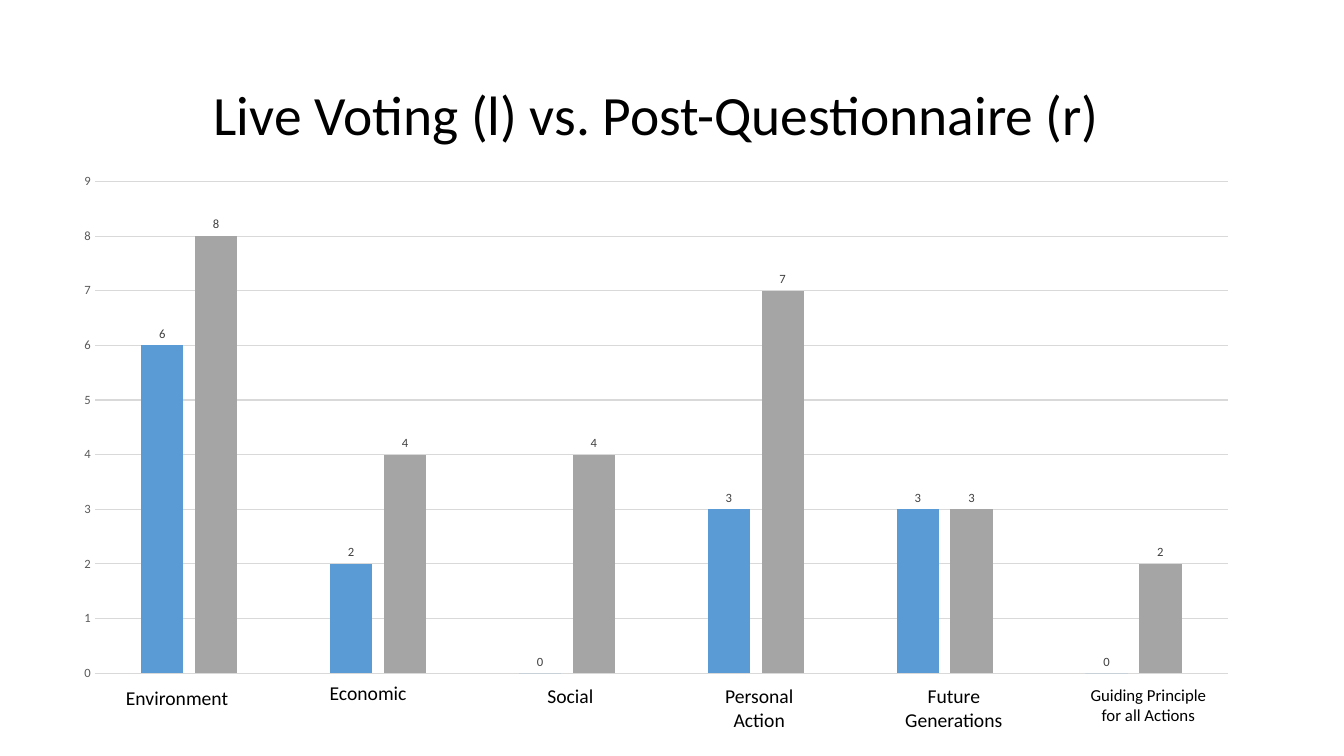
from dataclasses import dataclass

import lxml.etree
import pptx
import pptx.chart.data
import pptx.dml.color
import pptx.enum.chart
import pptx.enum.shapes
import pptx.enum.text
import pptx.oxml.ns
import pptx.util

Inches = pptx.util.Inches
Align = pptx.enum.text.PP_ALIGN


@dataclass(frozen=True)
class Theme:
    font: str = "Calibri"
    ink: str = "000000"
    paper: str = "FFFFFF"
    grid: str = "D9D9D9"
    axis_text: str = "595959"
    value_text: str = "404040"
    title_size: float = 39.6
    label_size: float = 14
    small_label_size: float = 12
    chart_size: float = 10
    axis_size: float = 9
    line_width: float = 0.75


@dataclass(frozen=True)
class Area:
    left: float
    top: float
    width: float
    height: float

    def lengths(self) -> list[int]:
        return [Inches(side) for side in (self.left, self.top, self.width, self.height)]


@dataclass(frozen=True)
class Series:
    name: str
    values: tuple[int, ...]
    color: str


@dataclass(frozen=True)
class Label:
    text: str
    area: Area
    align: Align = Align.LEFT
    size: float = Theme.label_size


THEME = Theme()
SERIES = (
    Series("Live Voting", (6, 2, 0, 3, 3, 0), "5B9BD5"),
    Series("Post-Questionnaire", (8, 4, 4, 7, 3, 2), "A5A5A5"),
)
TITLE = f"{SERIES[0].name} (l) vs. {SERIES[1].name} (r)"
TITLE_AREA = Area(2.02, 0.84, 10, 0.65)
CHART_AREA = Area(0.6, 1.62, 11.81, 5.35)
PLOT_AREA = Area(0.94, 1.8, 11.24, 4.88)
LABELS = (
    Label("Environment", Area(1.15, 6.76, 1.42, 0.34)),
    Label("Economic", Area(3.17, 6.71, 1.42, 0.34)),
    Label("Social", Area(5.33, 6.74, 1.1, 0.34)),
    Label("Personal Action", Area(6.82, 6.74, 1.42, 0.57), Align.CENTER),
    Label("Future Generations", Area(8.75, 6.74, 1.42, 0.57), Align.CENTER),
    Label("Guiding Principle for all Actions", Area(10.68, 6.74, 1.42, 0.71),
          Align.CENTER, THEME.small_label_size),
)


def rgb(color: str) -> pptx.dml.color.RGBColor:
    return pptx.dml.color.RGBColor.from_string(color)


def style_font(font, size: float, color: str) -> None:
    font.name = THEME.font
    font.size = pptx.util.Pt(size)
    font.bold = False
    font.color.rgb = rgb(color)


def style_line(line) -> None:
    line.color.rgb = rgb(THEME.grid)
    line.width = pptx.util.Pt(THEME.line_width)


def write_text(frame, text: str, *, size: float, align: Align = Align.LEFT,
               anchor=pptx.enum.text.MSO_ANCHOR.TOP, line_spacing: float = 1.0) -> None:
    frame.word_wrap = True
    frame.vertical_anchor = anchor
    para = frame.paragraphs[0]
    para.alignment = align
    para.line_spacing = line_spacing
    span = para.add_run()
    span.text = text
    style_font(span.font, size, THEME.ink)


def add_title(page) -> None:
    box = page.shapes.add_textbox(*TITLE_AREA.lengths())
    write_text(box.text_frame, TITLE, size=THEME.title_size,
               anchor=pptx.enum.text.MSO_ANCHOR.MIDDLE, line_spacing=0.9)


def place_plot(chart) -> None:
    qn = pptx.oxml.ns.qn
    plot_area = chart.plots[0]._element.getparent()
    for old in plot_area.findall(qn("c:layout")):
        plot_area.remove(old)
    layout = lxml.etree.Element(qn("c:layout"))
    plot_area.insert(0, layout)
    manual = lxml.etree.SubElement(layout, qn("c:manualLayout"))
    settings = {
        "layoutTarget": "inner",
        "xMode": "edge",
        "yMode": "edge",
        "x": (PLOT_AREA.left - CHART_AREA.left) / CHART_AREA.width,
        "y": (PLOT_AREA.top - CHART_AREA.top) / CHART_AREA.height,
        "w": PLOT_AREA.width / CHART_AREA.width,
        "h": PLOT_AREA.height / CHART_AREA.height,
    }
    for name, value in settings.items():
        lxml.etree.SubElement(manual, qn(f"c:{name}")).set("val", str(value))


def add_comparison_chart(page) -> None:
    kinds = pptx.enum.chart
    data = pptx.chart.data.CategoryChartData()
    data.categories = [label.text for label in LABELS]
    for entry in SERIES:
        data.add_series(entry.name, entry.values)
    chart = page.shapes.add_chart(
        kinds.XL_CHART_TYPE.COLUMN_CLUSTERED, *CHART_AREA.lengths(), data).chart
    chart.has_title = False
    chart.has_legend = False
    style_font(chart.font, THEME.chart_size, THEME.ink)
    place_plot(chart)

    for axis in (chart.category_axis, chart.value_axis):
        axis.major_tick_mark = kinds.XL_TICK_MARK.NONE
        axis.minor_tick_mark = kinds.XL_TICK_MARK.NONE
        style_font(axis.tick_labels.font, THEME.axis_size, THEME.axis_text)
    chart.category_axis.tick_label_position = kinds.XL_TICK_LABEL_POSITION.NONE
    style_line(chart.category_axis.format.line)
    scale = chart.value_axis
    scale.minimum_scale, scale.maximum_scale, scale.major_unit = 0, 9, 1
    scale.format.line.fill.background()
    style_line(scale.major_gridlines.format.line)

    plot = chart.plots[0]
    plot.vary_by_categories = False
    plot.gap_width = 219
    plot.overlap = -27
    for entry, columns in zip(SERIES, plot.series):
        columns.format.fill.solid()
        columns.format.fill.fore_color.rgb = rgb(entry.color)
        values = columns.data_labels
        values.show_value = True
        values.position = kinds.XL_LABEL_POSITION.OUTSIDE_END
        style_font(values.font, THEME.axis_size, THEME.value_text)


def add_label(page, label: Label) -> None:
    box = page.shapes.add_shape(
        pptx.enum.shapes.MSO_SHAPE.RECTANGLE, *label.area.lengths())
    box.shadow.inherit = False
    box.fill.solid()
    box.fill.fore_color.rgb = rgb(THEME.paper)
    box.line.fill.background()
    write_text(box.text_frame, label.text, size=label.size, align=label.align)
    box.text_frame.auto_size = pptx.enum.text.MSO_AUTO_SIZE.SHAPE_TO_FIT_TEXT


def main() -> None:
    deck = pptx.Presentation()
    deck.slide_width = Inches(13.33)
    deck.slide_height = Inches(7.5)
    page = deck.slides.add_slide(deck.slide_layouts[6])
    add_title(page)
    add_comparison_chart(page)
    for label in LABELS:
        add_label(page, label)
    deck.save("out.pptx")


if __name__ == "__main__":
    main()
